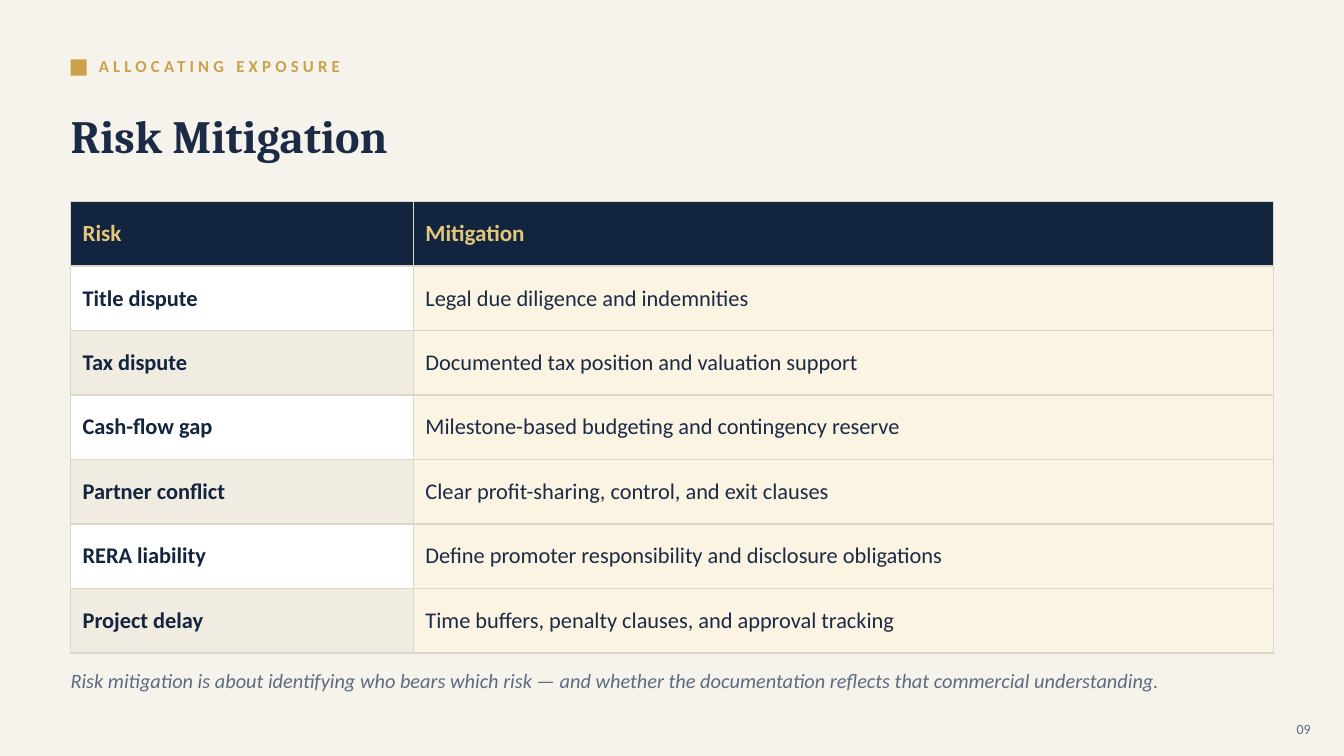
from pptx import Presentation
from pptx.dml.color import RGBColor as RGB
from pptx.enum.shapes import MSO_SHAPE as Kind
from pptx.enum.text import MSO_ANCHOR as Anchor, MSO_AUTO_SIZE as Auto, PP_ALIGN as Align
from pptx.oxml import parse_xml
from pptx.oxml.ns import nsdecls
from pptx.util import Inches, Pt

CREAM = RGB(0xF6, 0xF3, 0xEC)
GOLD = RGB(0xC9, 0xA2, 0x4B)
PALE = RGB(0xE2, 0xC7, 0x79)
INK = RGB(0x1B, 0x2A, 0x45)
NAVY = RGB(0x13, 0x24, 0x3F)
SLATE = RGB(0x5C, 0x6B, 0x82)
WHITE = RGB(0xFF, 0xFF, 0xFF)
SAND = RGB(0xF0, 0xEC, 0xE1)
BUTTER = RGB(0xFB, 0xF4, 0xE2)
RULE = RGB(0xDD, 0xD7, 0xC9)

RISKS = [
    ("Risk", "Mitigation"),
    ("Title dispute", "Legal due diligence and indemnities"),
    ("Tax dispute", "Documented tax position and valuation support"),
    ("Cash-flow gap", "Milestone-based budgeting and contingency reserve"),
    ("Partner conflict", "Clear profit-sharing, control, and exit clauses"),
    ("RERA liability", "Define promoter responsibility and disclosure obligations"),
    ("Project delay", "Time buffers, penalty clauses, and approval tracking"),
]


class Deck:
    sans = "Calibri"
    serif = "Cambria"
    unit = Inches(0.1)

    def __init__(self):
        self.prs = Presentation()
        self.prs.slide_width = Inches(13.33)
        self.prs.slide_height = Inches(7.5)
        self.slide = self.prs.slides.add_slide(self.prs.slide_layouts[5])
        self.slide.background.fill.solid()
        self.slide.background.fill.fore_color.rgb = CREAM

    def grid(self, *cells):
        return [round(n * self.unit) for n in cells]

    def style(self, para, size, color, bold=False, italic=False, face=None, align=Align.LEFT):
        para.alignment = align
        font = para.font
        font.name = face or self.sans
        font.size = Pt(size)
        font.color.rgb = color
        font.bold = bold
        font.italic = italic

    def fit(self, shape, text, size, color, **look):
        frame = shape.text_frame
        frame.text = text
        frame.word_wrap = True
        frame.auto_size = Auto.NONE
        frame.vertical_anchor = Anchor.MIDDLE
        frame.margin_left = frame.margin_right = 0
        frame.margin_top = frame.margin_bottom = 0
        self.style(frame.paragraphs[0], size, color, **look)

    def title(self, area, text):
        shape = self.slide.shapes.title
        shape.left, shape.top, shape.width, shape.height = self.grid(*area)
        self.fit(shape, text, 33, INK, bold=True, face=self.serif)

    def text(self, area, text, size, color, track=0, **look):
        box = self.slide.shapes.add_textbox(*self.grid(*area))
        self.fit(box, text, size, color, **look)
        if track:
            run = box.text_frame.paragraphs[0].runs[0]
            run._r.get_or_add_rPr().set("spc", str(track * 100))

    def block(self, area, color):
        shape = self.slide.shapes.add_shape(Kind.RECTANGLE, *self.grid(*area))
        shape.shadow.inherit = False
        shape.fill.solid()
        shape.fill.fore_color.rgb = color
        shape.line.fill.background()

    def cell(self, cell, text, fill, size, color, bold):
        cell.text = text
        cell.vertical_anchor = Anchor.MIDDLE
        cell.margin_left = cell.margin_right = Inches(0.12)
        cell.margin_top = cell.margin_bottom = Inches(0.07)
        props = cell._tc.get_or_add_tcPr()
        for side in "LRTB":
            props.append(parse_xml(
                f'<a:ln{side} {nsdecls("a")} w="{Pt(1)}"><a:solidFill>'
                f'<a:srgbClr val="{RULE}"/></a:solidFill></a:ln{side}>'))
        cell.fill.solid()
        cell.fill.fore_color.rgb = fill
        self.style(cell.text_frame.paragraphs[0], size, color, bold)

    def table(self, area, rows, widths):
        frame = self.slide.shapes.add_table(len(rows), len(widths), *self.grid(*area))
        table = frame.table
        for col, width in zip(table.columns, self.grid(*widths)):
            col.width = width
        for r, (risk, cure) in enumerate(rows):
            if r == 0:
                looks = [(NAVY, 16.5, PALE, True)] * 2
            else:
                band = WHITE if r % 2 else SAND
                looks = [(band, 16, NAVY, True), (BUTTER, 16, INK, False)]
            for c, (text, look) in enumerate(zip((risk, cure), looks)):
                self.cell(table.cell(r, c), text, *look)


def main():
    deck = Deck()
    deck.block((7, 5.9, 1.6, 1.6), GOLD)
    deck.text((9.8, 4.8, 90, 3.4), "ALLOCATING EXPOSURE", 12, GOLD, track=3, bold=True)
    deck.title((7, 8.8, 119.5, 9.2), "Risk Mitigation")
    deck.table((7, 20, 119.3, 44.8), RISKS, (34, 85.3))
    deck.text((7, 65.5, 119, 4),
              "Risk mitigation is about identifying who bears which risk — and whether "
              "the documentation reflects that commercial understanding.",
              14.5, SLATE, italic=True)
    deck.text((124, 70.8, 6, 3), "09", 10, SLATE, align=Align.RIGHT)
    deck.prs.save("out.pptx")


if __name__ == "__main__":
    main()
